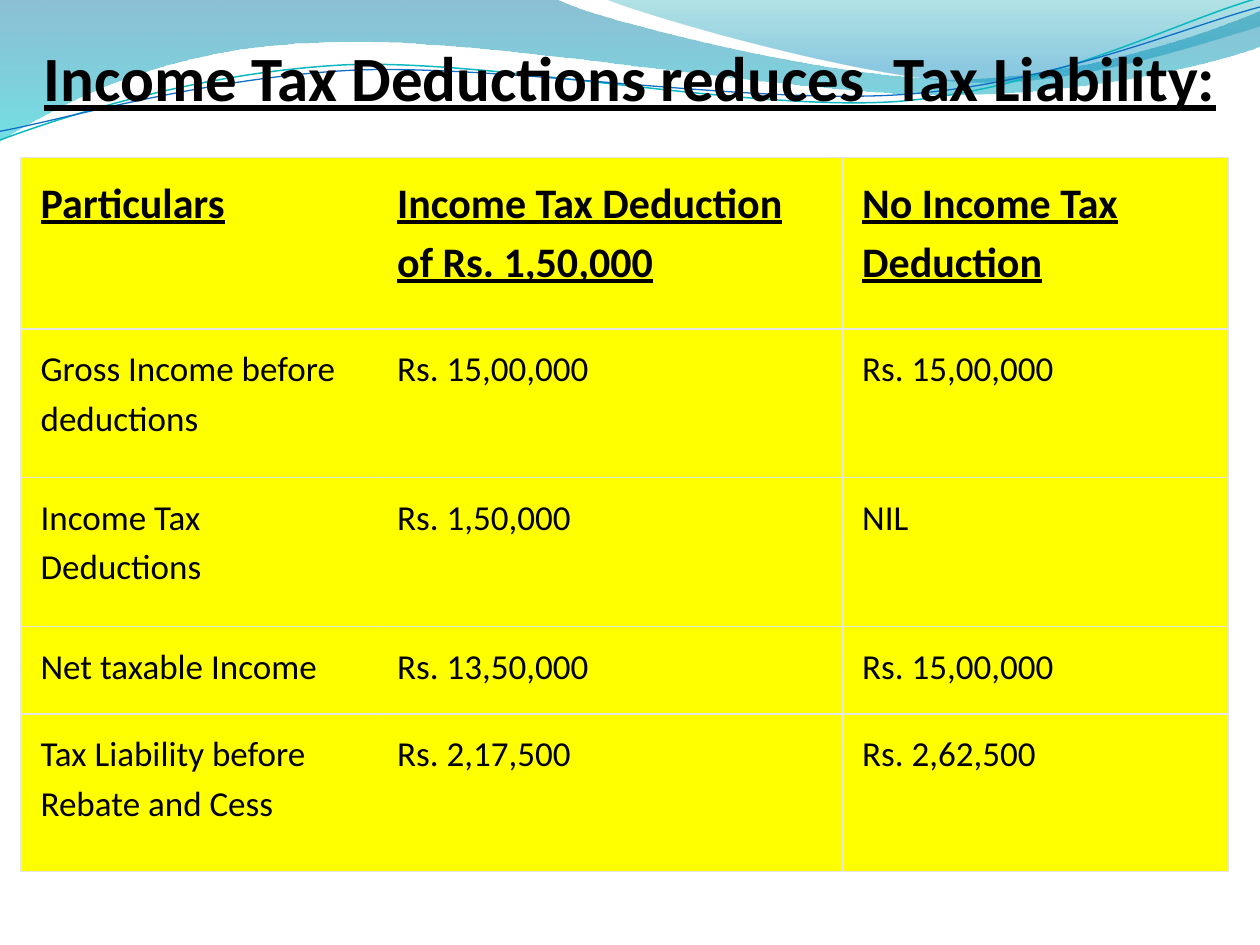
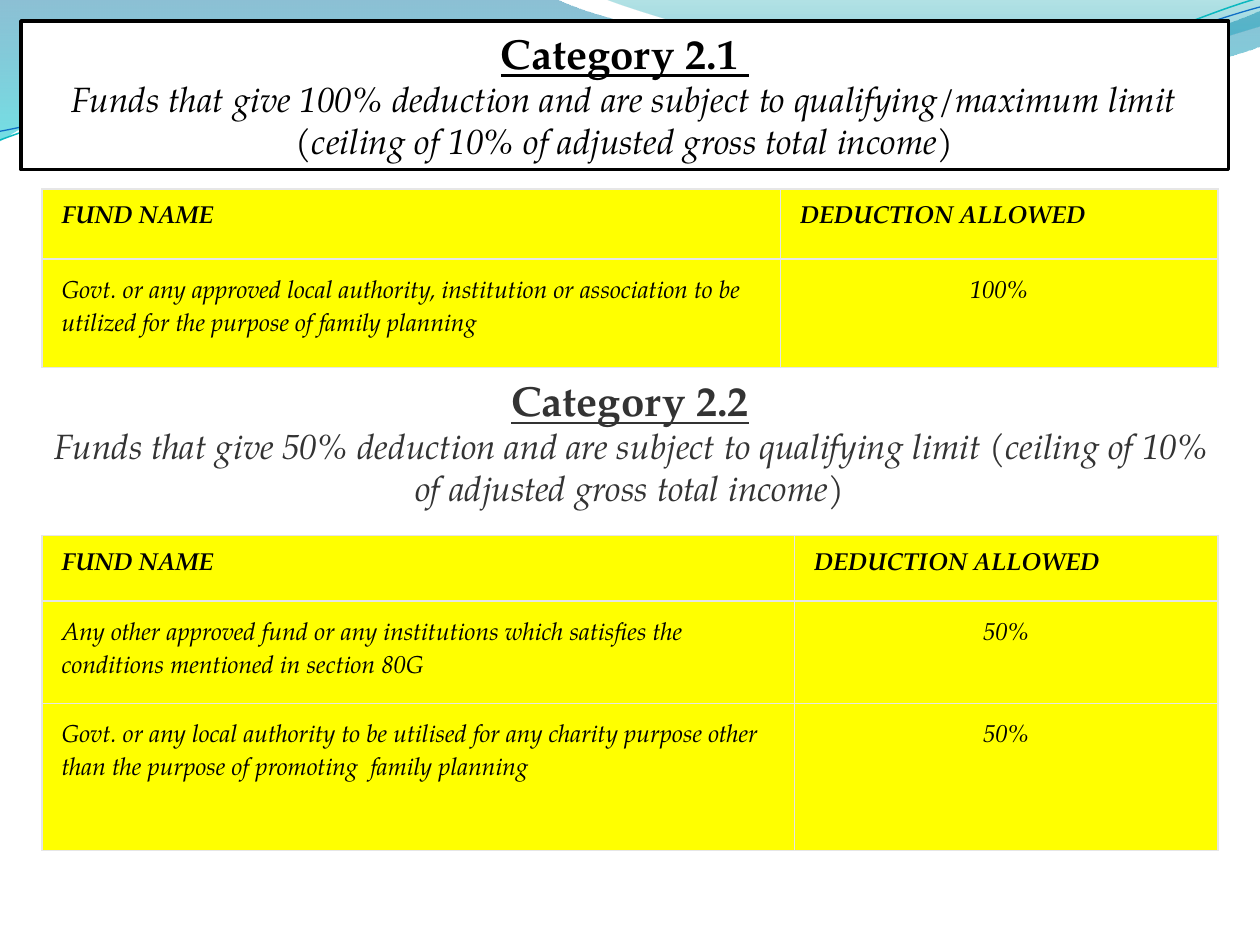
from collections import namedtuple

from lxml import etree
from pptx import Presentation
from pptx.dml.color import RGBColor
from pptx.enum import shapes, text
from pptx.oxml import ns
from pptx.util import Pt

BLACK = RGBColor(0x00, 0x00, 0x00)
CHARCOAL = RGBColor(0x33, 0x33, 0x33)
WHITE = RGBColor(0xFF, 0xFF, 0xFF)
YELLOW = RGBColor(0xFF, 0xFF, 0x00)
RULE_GREY = RGBColor(0xE6, 0xE6, 0xE6)
DEEP_BLUE = RGBColor(0x00, 0x74, 0xA1)
AQUA = RGBColor(0x00, 0xC6, 0xCF)
TEAL = RGBColor(0x00, 0xA1, 0xA9)
SEA_BLUE = RGBColor(0x00, 0x8B, 0xBF)
RIBBON_TEAL = RGBColor(0x0A, 0xB8, 0xBF)
RIBBON_BLUE = RGBColor(0x0F, 0x6F, 0xC6)

SANS = "Calibri"
SERIF = "TeX Gyre Pagella"
LEFT, CENTER = text.PP_ALIGN.LEFT, text.PP_ALIGN.CENTER

Box = namedtuple("Box", "left top width height")
Style = namedtuple("Style", "font size color bold italic underline",
                   defaults=(BLACK, False, False, False))
Layout = namedtuple("Layout", "header body line_spacing header_after body_after last_align")

TITLE = Style(SANS, 36, bold=True, underline=True)
CATEGORY = Style(SERIF, 24, bold=True, underline=True)
SUBTITLE = Style(SERIF, 20, italic=True)
TAX_TABLE = Layout(Style(SANS, 24, bold=True, underline=True), Style(SANS, 20),
                   1.15, 0, 0, LEFT)
FUND_TABLE = Layout(Style(SERIF, 14, bold=True, italic=True), Style(SERIF, 14, italic=True),
                    Pt(18.8), 15, 11.2, CENTER)

BIG_WAVE = [(0, 0), (317, -1), (343, 12, 478, 45, 546, 45), (614, 45, 690, 19, 720, 6),
            (721, 26), (708, 32, 626, 55, 537, 54), (448, 54, 275, 20, 185, 24),
            (93, 26, 33, 60, -1, 81), (0, 0)]
SMALL_WAVE = [(345, -1), (366, 8, 491, 45, 554, 47), (616, 50, 692, 23, 720, 15),
              (720, 0), (345, -1)]
TEAL_RIBBON = [(0, 80), (35, 67, 114, 41, 199, 37), (284, 34, 427, 64, 513, 58),
               (600, 51, 675, 11, 719, -1)]
BLUE_RIBBON = [(0, 75), (34, 69, 118, 44, 204, 40), (290, 37, 430, 60, 516, 54),
               (602, 48, 678, 15, 720, 4)]


def add_xml(parent, tag, **attributes):
    return etree.SubElement(parent, ns.qn(tag), attributes)


def add_outline(page, box, segments, closed):
    ends = [segment[-2:] for segment in segments]
    places = [(Pt(box.left + x), Pt(box.top + y)) for x, y in ends]
    builder = page.shapes.build_freeform(*places[0])
    builder.add_line_segments(places[1:], close=closed)
    outline = builder.convert_to_shape()
    outline.shadow.inherit = False
    outline.fill.background()
    origin_x, origin_y = (min(values) for values in zip(*ends))
    lines = list(outline._element.iter(ns.qn("a:lnTo")))
    for line, segment in zip(lines, segments[1:]):
        if len(segment) == 6:
            curve = etree.Element(ns.qn("a:cubicBezTo"))
            for x, y in zip(segment[::2], segment[1::2]):
                add_xml(curve, "a:pt", x=str(Pt(x - origin_x)), y=str(Pt(y - origin_y)))
            line.getparent().replace(line, curve)
    return outline


def add_wave(page, box, segments, stops):
    wave = add_outline(page, box, segments, True)
    wave.line.fill.background()
    no_fill = wave._element.spPr.find(ns.qn("a:noFill"))
    gradient = etree.Element(ns.qn("a:gradFill"), rotWithShape="1")
    stop_list = add_xml(gradient, "a:gsLst")
    for position, color, opacity in stops:
        stop = add_xml(stop_list, "a:gs", pos=str(position * 1000))
        add_xml(add_xml(stop, "a:srgbClr", val=str(color)), "a:alpha", val=str(opacity * 1000))
    add_xml(gradient, "a:lin", ang="5400000", scaled="0")
    no_fill.getparent().replace(no_fill, gradient)


def add_wave_band(page, box):
    add_wave(page, box, BIG_WAVE, [(0, DEEP_BLUE, 45), (100, AQUA, 55)])
    add_wave(page, box, SMALL_WAVE, [(0, TEAL, 30), (80, SEA_BLUE, 45)])
    for segments, color, width in ((TEAL_RIBBON, RIBBON_TEAL, 0.85),
                                   (BLUE_RIBBON, RIBBON_BLUE, 0.75)):
        ribbon = add_outline(page, box, segments, False)
        ribbon.line.color.rgb = color
        ribbon.line.width = Pt(width)


def style_span(span, style):
    span.font.name = style.font
    span.font.size = Pt(style.size)
    span.font.color.rgb = style.color
    span.font.bold = style.bold
    span.font.italic = style.italic
    span.font.underline = style.underline


def fill_para(para, wording, style, align=LEFT):
    para.text = wording
    para.alignment = align
    style_span(para.runs[0], style)


def add_text_box(page, box):
    frame = page.shapes.add_textbox(*map(Pt, box)).text_frame
    frame.word_wrap = True
    frame.vertical_anchor = text.MSO_ANCHOR.MIDDLE
    return frame


def add_category_panel(page, box, category, description):
    panel = page.shapes.add_shape(shapes.MSO_SHAPE.RECTANGLE, *map(Pt, box))
    panel.shadow.inherit = False
    panel.fill.solid()
    panel.fill.fore_color.rgb = WHITE
    panel.line.color.rgb = BLACK
    panel.line.width = Pt(2)
    frame = panel.text_frame
    frame.word_wrap = True
    frame.vertical_anchor = text.MSO_ANCHOR.TOP
    fill_para(frame.paragraphs[0], category, CATEGORY, CENTER)
    fill_para(frame.add_paragraph(), description, SUBTITLE, CENTER)


def add_category_text(page, box, category, description):
    frame = add_text_box(page, box)
    fill_para(frame.paragraphs[0], category, CATEGORY._replace(color=CHARCOAL), CENTER)
    para = frame.add_paragraph()
    fill_para(para, " ", Style(SANS, 11, CHARCOAL), CENTER)
    span = para.add_run()
    span.text = description
    style_span(span, SUBTITLE._replace(color=CHARCOAL))


def add_borders(cell):
    properties = cell._tc.get_or_add_tcPr()
    for index, side in enumerate("LRTB"):
        border = etree.Element(ns.qn("a:ln" + side), w=str(Pt(1)))
        add_xml(add_xml(border, "a:solidFill"), "a:srgbClr", val=str(RULE_GREY))
        properties.insert(index, border)


def add_yellow_table(page, left, top, widths, heights, rows, layout):
    table = page.shapes.add_table(len(rows), len(widths), Pt(left), Pt(top),
                                  Pt(sum(widths)), Pt(sum(heights))).table
    table.first_row = table.horz_banding = False
    for column, width in zip(table.columns, widths):
        column.width = Pt(width)
    for r, (height, wordings) in enumerate(zip(heights, rows)):
        table.rows[r].height = Pt(height)
        for c, wording in enumerate(wordings):
            cell = table.cell(r, c)
            cell.margin_left = cell.margin_right = Pt(11.25)
            cell.margin_top = cell.margin_bottom = Pt(7.5)
            cell.fill.solid()
            cell.fill.fore_color.rgb = YELLOW
            is_header = r == 0
            is_last = c == len(widths) - 1
            para = cell.text_frame.paragraphs[0]
            fill_para(para, wording, layout.header if is_header else layout.body,
                      layout.last_align if is_last and not is_header else LEFT)
            para.line_spacing = 1.15 if is_header else layout.line_spacing
            para.space_after = Pt(layout.header_after if is_header else layout.body_after)
            add_borders(cell)


def build_liability_page(page, box):
    add_wave_band(page, box)
    title = add_text_box(page, Box(box.left + 18, box.top - 10, box.width - 18, 107))
    fill_para(title.paragraphs[0], "Income Tax Deductions reduces  Tax Liability:", TITLE)
    rows = [
        ("Particulars", "Income Tax Deduction of Rs. 1,50,000", "No Income Tax Deduction"),
        ("Gross Income before deductions", "Rs. 15,00,000", "Rs. 15,00,000"),
        ("Income Tax Deductions", "Rs. 1,50,000", "NIL"),
        ("Net taxable Income", "Rs. 13,50,000", "Rs. 15,00,000"),
        ("Tax Liability before Rebate and Cess", "Rs. 2,17,500", "Rs. 2,62,500"),
    ]
    add_yellow_table(page, box.left + 12, box.top + 90, (203.8, 265.7, 220.5),
                     (98, 85, 85, 50, 90), rows, TAX_TABLE)


def build_funds_page(page, box):
    add_wave_band(page, box)
    add_category_panel(
        page, Box(box.left + 12, box.top + 12, box.width - 30, 85), "Category 2.1 ",
        "Funds that give 100% deduction and are subject to qualifying/maximum limit "
        "(ceiling of 10% of adjusted gross total income)")
    header = ("FUND NAME", "DEDUCTION ALLOWED")
    family_planning = ("Govt. or any approved local authority, institution or association "
                       "to be utilized for the purpose of family planning", "100%")
    add_yellow_table(page, box.left + 24, box.top + 108, (422, 250), (40, 62),
                     [header, family_planning], FUND_TABLE)
    add_category_text(
        page, Box(box.left + 18, box.top + 210, box.width - 36, 84.5), "Category 2.2",
        "Funds that give 50% deduction and are subject to qualifying limit "
        "(ceiling of 10% of adjusted gross total income)")
    approved_fund = ("Any other approved fund or any institutions which satisfies the "
                     "conditions mentioned in section 80G", "50%")
    charity = ("Govt. or any local authority to be utilised for any charity purpose other "
               "than the purpose of promoting  family planning", "50%")
    add_yellow_table(page, box.left + 24, box.top + 306, (430, 242), (37.5, 58.5, 84),
                     [header, approved_fund, charity], FUND_TABLE)


def main():
    deck = Presentation()
    deck.slide_width, deck.slide_height = Pt(720), Pt(540)
    for build_page in (build_liability_page, build_funds_page):
        build_page(deck.slides.add_slide(deck.slide_layouts[6]), Box(0, 0, 720, 540))
    deck.save("out.pptx")


if __name__ == "__main__":
    main()
